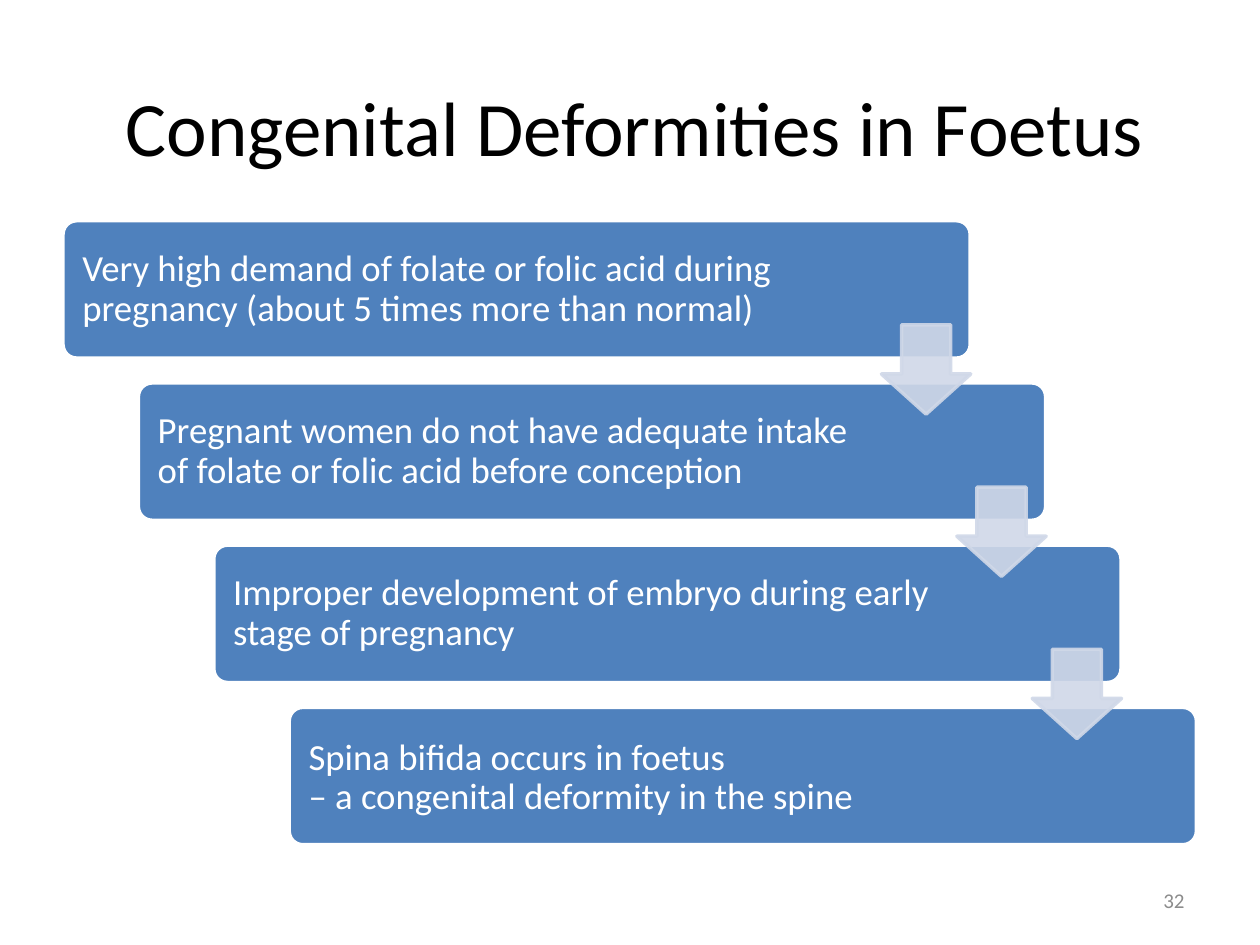
from dataclasses import dataclass

import pptx
import pptx.dml.color
import pptx.enum.shapes
import pptx.enum.text
import pptx.oxml
import pptx.oxml.ns
import pptx.util

Cm = pptx.util.Cm
Pt = pptx.util.Pt
RGBColor = pptx.dml.color.RGBColor
Shapes = pptx.enum.shapes.MSO_SHAPE
Align = pptx.enum.text.PP_ALIGN
MIDDLE = pptx.enum.text.MSO_ANCHOR.MIDDLE

BLUE = RGBColor(0x4F, 0x81, 0xBD)
PALE_BLUE = RGBColor(0xD0, 0xD8, 0xE8)
WHITE = RGBColor(0xFF, 0xFF, 0xFF)
BLACK = RGBColor(0x00, 0x00, 0x00)
GREY = RGBColor(0x8C, 0x8C, 0x8C)
FONT = "Calibri"

# Each step sits one shift to the right of and below the one before (cm).
SHIFT_X, SHIFT_Y = 1.52, 3.27
BOX_LEFT, BOX_TOP, BOX_WIDTH, BOX_HEIGHT = 1.27, 4.45, 18.29, 2.77
ARROW_LEFT, ARROW_TOP, ARROW_SIZE = 17.77, 6.55, 1.8


@dataclass
class Step:
    index: int
    lines: tuple[str, ...]


STEPS = [
    Step(0, ("Very high demand of folate or folic acid during "
             "pregnancy (about 5 times more than normal)",)),
    Step(1, ("Pregnant women do not have adequate intake "
             "of folate or folic acid before conception",)),
    Step(2, ("Improper development of embryo during early stage of pregnancy",)),
    Step(3, ("Spina bifida occurs in foetus",
             "– a congenital deformity in the spine")),
]


def style_font(paragraph, size: float, color: RGBColor) -> None:
    paragraph.font.name = FONT
    paragraph.font.size = Pt(size)
    paragraph.font.color.rgb = color


def style_shape(shape, fill: RGBColor, line: RGBColor) -> None:
    shape.shadow.inherit = False
    shape.fill.solid()
    shape.fill.fore_color.rgb = fill
    shape.line.color.rgb = line
    shape.line.width = Pt(2)


def set_opacity(shape, percent: int) -> None:
    """Apply the opacity to both the fill and the line."""
    tag = pptx.oxml.ns.qn("a:srgbClr")
    for color in shape.element.spPr.iter(tag):
        alpha = pptx.oxml.parse_xml(
            f'<a:alpha {pptx.oxml.ns.nsdecls("a")} val="{percent * 1000}"/>')
        color.append(alpha)


def add_step(slide, step: Step) -> None:
    box = slide.shapes.add_shape(
        Shapes.ROUNDED_RECTANGLE,
        Cm(BOX_LEFT + step.index * SHIFT_X), Cm(BOX_TOP + step.index * SHIFT_Y),
        Cm(BOX_WIDTH), Cm(BOX_HEIGHT))
    box.adjustments[0] = 0.1
    style_shape(box, BLUE, WHITE)
    frame = box.text_frame
    frame.word_wrap = True
    frame.vertical_anchor = MIDDLE
    frame.margin_left, frame.margin_right = Cm(0.31), Cm(3.63)
    frame.text = "\n".join(step.lines)
    for paragraph in frame.paragraphs:
        paragraph.alignment = Align.LEFT
        style_font(paragraph, 21, WHITE)
    frame.paragraphs[-1].line_spacing = 0.9


def add_arrow_below(slide, step: Step) -> None:
    arrow = slide.shapes.add_shape(
        Shapes.DOWN_ARROW,
        Cm(ARROW_LEFT + step.index * SHIFT_X), Cm(ARROW_TOP + step.index * SHIFT_Y),
        Cm(ARROW_SIZE), Cm(ARROW_SIZE))
    arrow.adjustments[0] = 0.55
    arrow.adjustments[1] = 0.45
    style_shape(arrow, PALE_BLUE, PALE_BLUE)
    set_opacity(arrow, 90)


def add_title(slide, text: str) -> None:
    title = slide.shapes.title
    title.left, title.top = Cm(1.37), Cm(0.94)
    title.width, title.height = Cm(22.86), Cm(3.18)
    title.text_frame.text = text
    title.text_frame.vertical_anchor = MIDDLE
    paragraph = title.text_frame.paragraphs[0]
    paragraph.alignment = Align.CENTER
    style_font(paragraph, 44, BLACK)


def add_page_number(slide, number: str) -> None:
    box = slide.shapes.add_textbox(Cm(18.2), Cm(17.65), Cm(5.93), Cm(1.01))
    frame = box.text_frame
    frame.word_wrap = True
    frame.vertical_anchor = MIDDLE
    frame.text = number
    frame.paragraphs[0].alignment = Align.RIGHT
    style_font(frame.paragraphs[0], 12, GREY)


def main() -> None:
    presentation = pptx.Presentation()
    presentation.slide_width, presentation.slide_height = Cm(25.4), Cm(19.05)
    title_only = presentation.slide_layouts[5]
    slide = presentation.slides.add_slide(title_only)
    add_title(slide, "Congenital Deformities in Foetus")
    for step in STEPS:
        add_step(slide, step)
    for step in STEPS[:-1]:
        add_arrow_below(slide, step)
    add_page_number(slide, "32")
    presentation.save("out.pptx")


if __name__ == "__main__":
    main()
